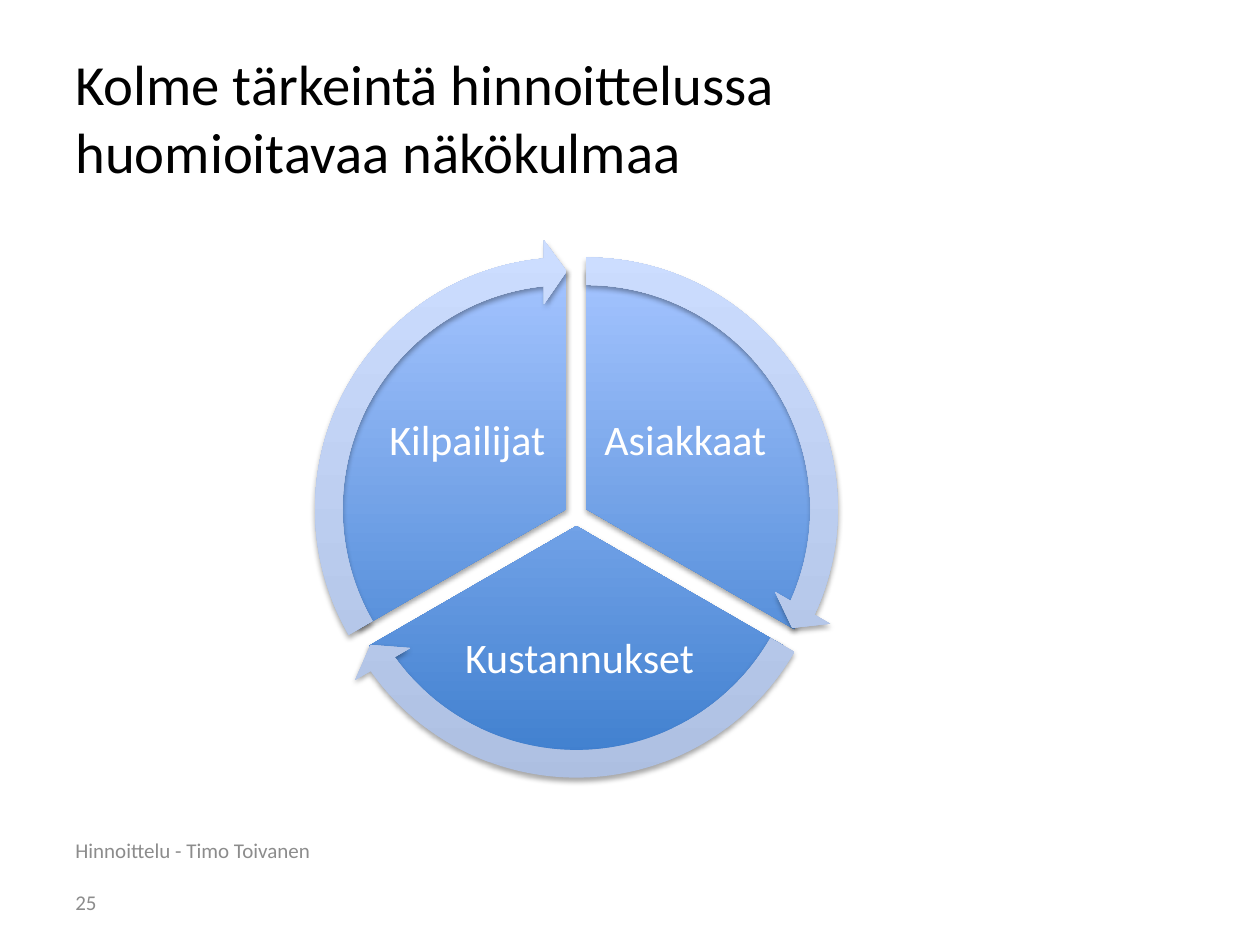
import math
from dataclasses import dataclass

from lxml import etree
from pptx import Presentation
from pptx import util as u
from pptx.dml.color import RGBColor
from pptx.enum import shapes, text
from pptx.oxml import ns


@dataclass(frozen=True)
class Theme:
    font: str = "Calibri"
    title: tuple = (32.4, "000000")
    label: tuple = (24, "FFFFFF")
    footer: tuple = (12, "8C8C8C")
    sector: tuple = ("3F7FCE", "A4C4FF")
    arrow: tuple = ("ADBFE1", "CCDDFF")


class CycleSlide:
    COLUMNS, ROWS = 100, 75

    def __init__(self, deck, theme):
        self.theme = theme
        self.slide = deck.slides.add_slide(deck.slide_layouts[6])
        self.column = deck.slide_width / self.COLUMNS
        self.row = deck.slide_height / self.ROWS

    def box(self, left, top, width, height):
        return (round(left * self.column), round(top * self.row),
                round(width * self.column), round(height * self.row))

    def words(self, content, area, style, **frame_format):
        frame = self.slide.shapes.add_textbox(*self.box(*area)).text_frame
        options = {"word_wrap": True, "vertical_anchor": text.MSO_ANCHOR.MIDDLE}
        for name, value in (options | frame_format).items():
            setattr(frame, name, value)
        paragraph = frame.paragraphs[0]
        paragraph.text = content
        size, color = style
        for name, value in {"name": self.theme.font, "size": u.Pt(size)}.items():
            setattr(paragraph.font, name, value)
        paragraph.font.color.rgb = RGBColor.from_string(color)
        return paragraph

    def label(self, content, area):
        margins = {f"margin_{side}": u.Inches(0.03)
                   for side in ("left", "top", "right", "bottom")}
        paragraph = self.words(content, area, self.theme.label, **margins)
        for name, value in {"alignment": text.PP_ALIGN.CENTER, "line_spacing": 0.9}.items():
            setattr(paragraph, name, value)

    def round_shape(self, kind, center, size, adjustments, colors):
        x, y = center
        shape = self.slide.shapes.add_shape(
            kind, *self.box(x - size / 2, y - size / 2, size, size))
        for index, value in enumerate(adjustments):
            shape.adjustments[index] = value
        shape.fill.gradient()
        shape.fill.gradient_angle = 90
        for stop, color in zip(shape.fill.gradient_stops, colors):
            stop.color.rgb = RGBColor.from_string(color)
        shape.line.fill.background()
        self.soften(shape)

    def soften(self, shape):
        shape.shadow.inherit = False
        effects = shape._element.spPr.find(ns.qn("a:effectLst"))
        shadow = etree.SubElement(effects, ns.qn("a:outerShdw"), {
            "blurRad": str(u.Pt(3.1)), "dist": str(u.Pt(1.8)),
            "dir": "5400000", "rotWithShape": "0"})
        color = etree.SubElement(shadow, ns.qn("a:srgbClr"), val="000000")
        etree.SubElement(color, ns.qn("a:alpha"), val="35000")

    def sector(self, center, start, end):
        self.round_shape(shapes.MSO_SHAPE.PIE, center, 38.1,
                         (start, end), self.theme.sector)

    def arrow(self, center, start, end):
        head = 3.275
        self.round_shape(shapes.MSO_SHAPE.CIRCULAR_ARROW, center, 42.8,
                         (0.051, head, end - head, start, 0.059), self.theme.arrow)


def main():
    deck = Presentation()
    deck.slide_width, deck.slide_height = u.Inches(10), u.Inches(7.5)
    theme = Theme()
    page = CycleSlide(deck, theme)
    page.words("Kolme tärkeintä hinnoittelussa huomioitavaa näkökulmaa",
               (5, 3, 79.5, 12.5), theme.title)

    perspectives = {
        "Asiakkaat": (47.6, 29.4, 13.6, 11.3),
        "Kustannukset": (35.8, 47.4, 20.4, 10),
        "Kilpailijat": (30.3, 29.4, 13.6, 11.3),
    }
    hub_x, hub_y, gap = 45.75, 40.85, 0.9
    units_per_degree = 0.6
    parts = []
    for index, (name, area) in enumerate(perspectives.items()):
        start = (270 + 120 * index) % 360
        end = (start + 120) % 360
        middle = math.radians(start + 60)
        center = (hub_x + gap * math.cos(middle), hub_y + gap * math.sin(middle))
        parts.append((center, start * units_per_degree, end * units_per_degree))
        page.sector(*parts[-1])
        page.label(name, area)
    for part in parts:
        page.arrow(*part)

    page.words("Hinnoittelu - Timo Toivanen", (5, 65.5, 31.7, 4), theme.footer)
    page.words("25", (5, 69.6, 12, 4), theme.footer)
    deck.save("out.pptx")


if __name__ == "__main__":
    main()
